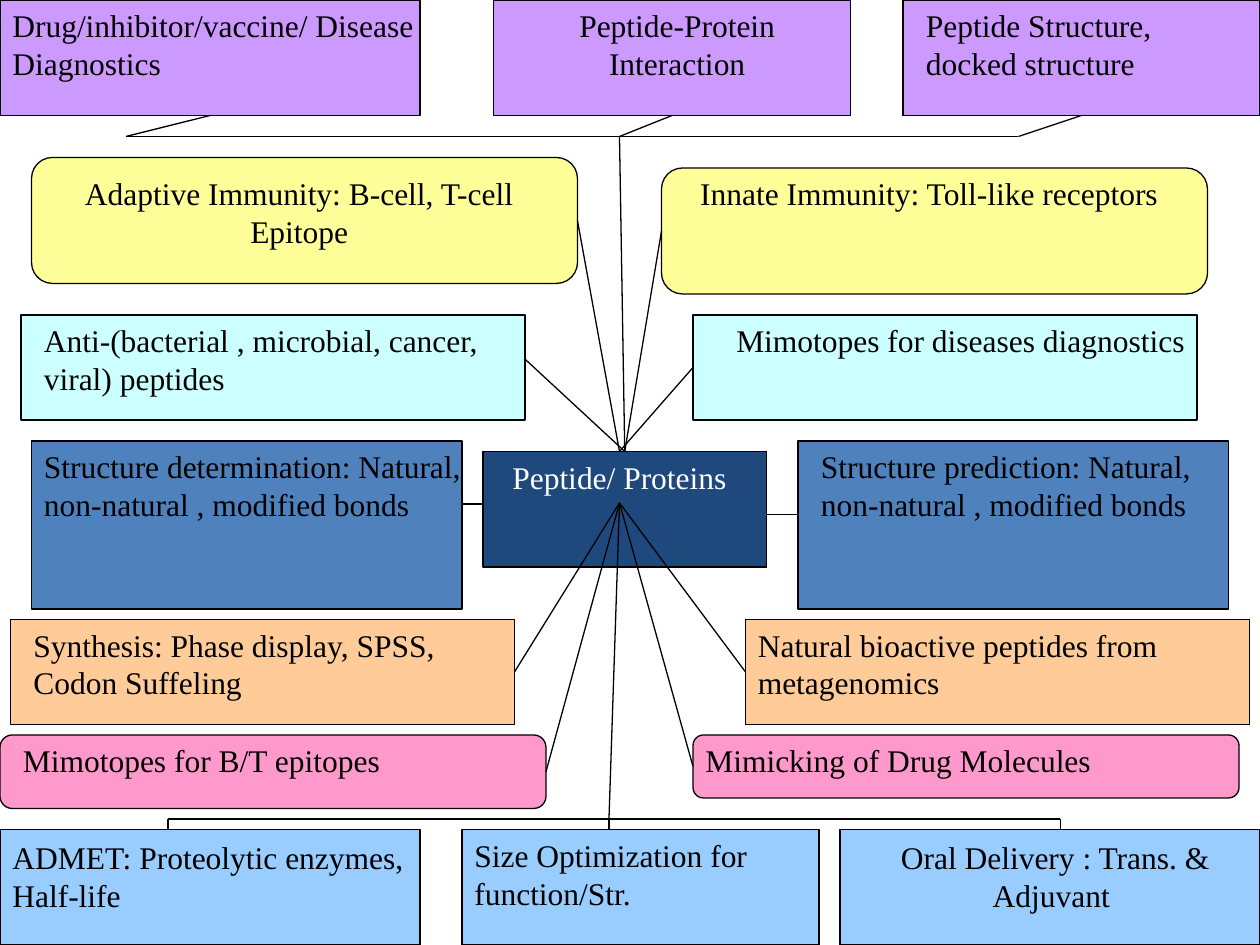
from typing import NamedTuple, Union

from lxml.etree import SubElement
from pptx import Presentation
from pptx.dml.color import RGBColor
from pptx.enum.shapes import MSO_CONNECTOR, MSO_SHAPE
from pptx.enum.text import MSO_AUTO_SIZE, PP_ALIGN
from pptx.oxml.ns import qn
from pptx.util import Emu, Pt

EMU_PER_PX = 7620
SLIDE_WIDTH, SLIDE_HEIGHT = 1200, 900
FONT = "Times New Roman"
BLACK, WHITE = "000000", "FFFFFF"
PURPLE, YELLOW, CYAN, BLUE = "CC99FF", "FFFF99", "CCFFFF", "4F81BD"
NAVY, ORANGE, PINK, SKY = "1F497D", "FFCC99", "FF99CC", "99CCFF"
RECT, ROUND = MSO_SHAPE.RECTANGLE, MSO_SHAPE.ROUNDED_RECTANGLE
LEFT, CENTER = PP_ALIGN.LEFT, PP_ALIGN.CENTER
TOP_SIDE, LEFT_SIDE, BOTTOM_SIDE, RIGHT_SIDE = range(4)
ONE_LINE, TWO_LINES = 48, 85


class Area(NamedTuple):
    left: int
    top: int
    width: int
    height: int


class Topic(NamedTuple):
    key: str
    text: str
    box: Area
    label: Area
    fill: str
    preset: MSO_SHAPE = RECT
    align: PP_ALIGN = LEFT
    color: str = BLACK


class Point(NamedTuple):
    x: int
    y: int


class Side(NamedTuple):
    key: str
    site: int


class Link(NamedTuple):
    start: Point
    end: Union[Point, Side]


TOPICS = [
    Topic("drug", "Drug/inhibitor/vaccine/ Disease Diagnostics",
          Area(0, 0, 400, 110), Area(0, 0, 530, TWO_LINES), PURPLE),
    Topic("interaction", "Peptide-Protein Interaction",
          Area(470, 0, 340, 110), Area(490, 0, 310, TWO_LINES), PURPLE, align=CENTER),
    Topic("docking", "Peptide Structure, docked structure",
          Area(860, 0, 340, 110), Area(870, 0, 330, TWO_LINES), PURPLE),
    Topic("adaptive", "Adaptive Immunity: B-cell, T-cell Epitope",
          Area(30, 150, 520, 120), Area(40, 160, 490, TWO_LINES), YELLOW, ROUND, CENTER),
    Topic("innate", "Innate Immunity: Toll-like receptors",
          Area(630, 160, 520, 120), Area(640, 160, 490, ONE_LINE), YELLOW, ROUND, CENTER),
    Topic("antimicrobial", "Anti-(bacterial , microbial, cancer, viral) peptides",
          Area(20, 300, 480, 100), Area(30, 300, 470, TWO_LINES), CYAN),
    Topic("diagnostics", "Mimotopes for diseases diagnostics",
          Area(660, 300, 480, 100), Area(680, 300, 470, ONE_LINE), CYAN, align=CENTER),
    Topic("determination", "Structure determination: Natural, non-natural , modified bonds",
          Area(30, 420, 410, 160), Area(30, 420, 460, TWO_LINES), BLUE),
    Topic("peptides", "Peptide/ Proteins",
          Area(460, 430, 270, 110), Area(450, 430, 280, ONE_LINE), NAVY,
          align=CENTER, color=WHITE),
    Topic("prediction", "Structure prediction: Natural, non-natural , modified bonds",
          Area(760, 420, 410, 160), Area(770, 420, 390, TWO_LINES), BLUE),
    Topic("synthesis", "Synthesis: Phase display, SPSS, Codon Suffeling",
          Area(10, 590, 480, 100), Area(20, 590, 450, TWO_LINES), ORANGE),
    Topic("metagenomics", "Natural bioactive peptides from metagenomics",
          Area(710, 590, 480, 100), Area(710, 590, 480, TWO_LINES), ORANGE),
    Topic("epitopes", "Mimotopes for B/T epitopes",
          Area(0, 700, 520, 70), Area(10, 700, 500, ONE_LINE), PINK, ROUND),
    Topic("mimicking", "Mimicking of Drug Molecules",
          Area(660, 700, 520, 60), Area(660, 700, 540, ONE_LINE), PINK, ROUND),
    Topic("admet", "ADMET: Proteolytic enzymes, Half-life",
          Area(0, 790, 400, 110), Area(0, 792, 400, TWO_LINES), SKY),
    Topic("size", "Size Optimization for function/Str.",
          Area(440, 790, 340, 110), Area(440, 790, 340, TWO_LINES), SKY),
    Topic("delivery", "Oral Delivery : Trans. & Adjuvant ",
          Area(800, 790, 400, 110), Area(810, 792, 390, TWO_LINES), SKY, align=CENTER),
]

UPPER_LEFT, UPPER_HUB, UPPER_RIGHT = Point(120, 130), Point(590, 130), Point(970, 130)
LOWER_LEFT, LOWER_HUB, LOWER_RIGHT = Point(160, 780), Point(580, 780), Point(1010, 780)
CORE = Point(590, 479)
CORE_TOP = Side("peptides", TOP_SIDE)
NEAR_TOP = Point(590, 430)

LINKS = [
    Link(UPPER_LEFT, UPPER_RIGHT),
    Link(UPPER_LEFT, Side("drug", BOTTOM_SIDE)),
    Link(UPPER_HUB, Side("interaction", BOTTOM_SIDE)),
    Link(UPPER_RIGHT, Side("docking", BOTTOM_SIDE)),
    Link(UPPER_HUB, CORE_TOP),
    Link(NEAR_TOP, Side("adaptive", RIGHT_SIDE)),
    Link(Side("innate", LEFT_SIDE), CORE_TOP),
    Link(Point(500, 342), CORE_TOP),
    Link(NEAR_TOP, Side("diagnostics", LEFT_SIDE)),
    Link(Point(460, 480), Point(440, 480)),
    Link(Point(730, 490), Point(760, 490)),
    Link(CORE, Side("synthesis", RIGHT_SIDE)),
    Link(CORE, Side("metagenomics", LEFT_SIDE)),
    Link(CORE, Side("epitopes", RIGHT_SIDE)),
    Link(CORE, Side("mimicking", LEFT_SIDE)),
    Link(CORE, LOWER_HUB),
    Link(LOWER_LEFT, LOWER_RIGHT),
    *(Link(joint, Point(joint.x, 790)) for joint in (LOWER_LEFT, LOWER_HUB, LOWER_RIGHT)),
]


def px(length: int) -> Emu:
    return Emu(length * EMU_PER_PX)


def rgb(color: str) -> RGBColor:
    return RGBColor.from_string(color)


def draw_topic(slide, topic: Topic):
    box = slide.shapes.add_shape(topic.preset, *map(px, topic.box))
    box.shadow.inherit = False
    box.fill.solid()
    box.fill.fore_color.rgb = rgb(topic.fill)
    box.line.color.rgb = rgb(BLACK)
    box.line.width = Pt(0.75)

    frame = slide.shapes.add_textbox(*map(px, topic.label)).text_frame
    frame.word_wrap = True
    frame.auto_size = MSO_AUTO_SIZE.SHAPE_TO_FIT_TEXT
    frame.text = topic.text
    paragraph = frame.paragraphs[0]
    paragraph.alignment = topic.align
    font = paragraph.runs[0].font
    font.name = FONT
    font.size = Pt(18)
    font.color.rgb = rgb(topic.color)
    return box


def draw_link(slide, link: Link, boxes: dict) -> None:
    ends = [end if isinstance(end, Point) else Point(0, 0)
            for end in (link.start, link.end)]
    line = slide.shapes.add_connector(
        MSO_CONNECTOR.STRAIGHT, *(px(value) for end in ends for value in end))
    for end, connect in ((link.start, line.begin_connect), (link.end, line.end_connect)):
        if isinstance(end, Side):
            connect(boxes[end.key], end.site)
    line.line.color.rgb = rgb(BLACK)
    line.line.width = Pt(0.75)
    SubElement(line._element.spPr, qn("a:effectLst"))


def main() -> None:
    presentation = Presentation()
    presentation.slide_width = px(SLIDE_WIDTH)
    presentation.slide_height = px(SLIDE_HEIGHT)
    slide = presentation.slides.add_slide(presentation.slide_layouts[6])
    boxes = {topic.key: draw_topic(slide, topic) for topic in TOPICS}
    for link in LINKS:
        draw_link(slide, link, boxes)
    presentation.save("out.pptx")


if __name__ == "__main__":
    main()
